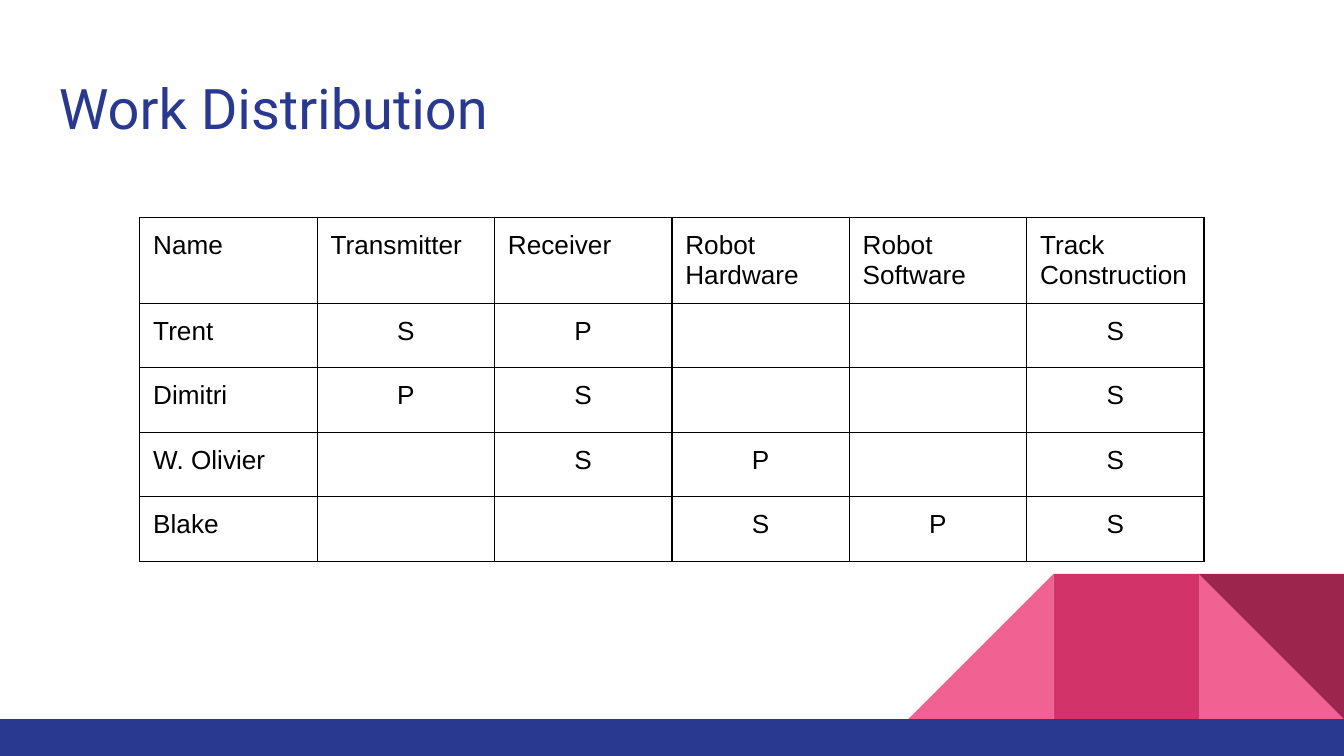
from typing import NamedTuple

from lxml.etree import SubElement
from pptx import Presentation
from pptx.dml.color import RGBColor
from pptx.enum.shapes import MSO_SHAPE
from pptx.enum.text import MSO_ANCHOR, PP_ALIGN
from pptx.oxml.ns import qn
from pptx.util import Inches, Pt


class Theme(NamedTuple):
    navy: str = "2A3990"
    light_pink: str = "F06292"
    pink: str = "D23369"
    dark_pink: str = "9C254D"
    ink: str = "000000"
    title_font: str = "Roboto"
    body_font: str = "Arial"
    title_size: int = 30
    body_size: int = 14
    header_line: float = 15.7
    border_width: float = 0.75


class Block(NamedTuple):
    preset: MSO_SHAPE
    left: float
    top: float
    width: float
    height: float
    color: str
    rotation: int = 0
    mirrored: bool = False


THEME = Theme()
SLIDE_WIDTH = 10
SLIDE_HEIGHT = SLIDE_WIDTH * 9 / 16
BAR_TOP = 5.35
TILE = 1.08
TILE_TOP = BAR_TOP - TILE
INSET = Inches(0.1)

TRIANGLE, RECTANGLE = MSO_SHAPE.RIGHT_TRIANGLE, MSO_SHAPE.RECTANGLE
DECORATION = [
    Block(TRIANGLE, SLIDE_WIDTH - TILE, TILE_TOP, TILE, TILE, THEME.light_pink),
    Block(TRIANGLE, SLIDE_WIDTH - 3 * TILE, TILE_TOP, TILE, TILE, THEME.light_pink, mirrored=True),
    Block(RECTANGLE, SLIDE_WIDTH - 2 * TILE, TILE_TOP, TILE, TILE, THEME.pink),
    Block(TRIANGLE, SLIDE_WIDTH - TILE, TILE_TOP, TILE, TILE, THEME.dark_pink, rotation=180),
    Block(RECTANGLE, 0, BAR_TOP, SLIDE_WIDTH, SLIDE_HEIGHT - BAR_TOP, THEME.navy),
]

ASSIGNMENTS = [
    ["Name", "Transmitter", "Receiver", "Robot Hardware", "Robot Software", "Track Construction"],
    ["Trent", "S", "P", "", "", "S"],
    ["Dimitri", "P", "S", "", "", "S"],
    ["W. Olivier", "", "S", "P", "", "S"],
    ["Blake", "", "", "S", "P", "S"],
]
COLUMN_WIDTH, HEADER_HEIGHT, ROW_HEIGHT = 1.32, 0.63, 0.48


def set_font(paragraph, name: str, size: int, color: str) -> None:
    paragraph.font.name = name
    paragraph.font.size = Pt(size)
    paragraph.font.color.rgb = RGBColor.from_string(color)


def draw_block(slide, block: Block) -> None:
    shape = slide.shapes.add_shape(
        block.preset, Inches(block.left), Inches(block.top), Inches(block.width), Inches(block.height)
    )
    shape.shadow.inherit = False
    shape.fill.solid()
    shape.fill.fore_color.rgb = RGBColor.from_string(block.color)
    shape.line.fill.background()
    shape.rotation = block.rotation
    if block.mirrored:
        shape._element.spPr.xfrm.set("flipH", "1")


def draw_title(slide, title: str) -> None:
    frame = slide.shapes.add_textbox(Inches(0.34), Inches(0.45), Inches(9.32), Inches(0.66)).text_frame
    frame.word_wrap = True
    frame.vertical_anchor = MSO_ANCHOR.TOP
    frame.margin_left = frame.margin_right = frame.margin_top = frame.margin_bottom = INSET
    heading = frame.paragraphs[0]
    heading.text = title
    set_font(heading, THEME.title_font, THEME.title_size, THEME.navy)


def outline_cell(cell) -> None:
    """Draw the four borders; they must precede the fill in the cell properties."""
    properties = cell._tc.get_or_add_tcPr()
    for position, side in enumerate(("lnL", "lnR", "lnT", "lnB")):
        border = SubElement(properties, qn(f"a:{side}"), w=str(Pt(THEME.border_width)))
        properties.insert(position, border)
        fill = SubElement(border, qn("a:solidFill"))
        SubElement(fill, qn("a:srgbClr"), val=THEME.ink)


def draw_assignments(slide, rows: list[list[str]]) -> None:
    column_count = len(rows[0])
    table = slide.shapes.add_table(
        len(rows), column_count, Inches(1.04), Inches(1.62),
        Inches(COLUMN_WIDTH * column_count),
        Inches(HEADER_HEIGHT + ROW_HEIGHT * (len(rows) - 1)),
    ).table
    table.first_row = table.horz_banding = False
    for column in table.columns:
        column.width = Inches(COLUMN_WIDTH)
    for row_index, row in enumerate(rows):
        table.rows[row_index].height = Inches(ROW_HEIGHT if row_index else HEADER_HEIGHT)
        for column_index, entry in enumerate(row):
            cell = table.cell(row_index, column_index)
            cell.margin_left = cell.margin_right = cell.margin_top = cell.margin_bottom = INSET
            cell.fill.background()
            outline_cell(cell)
            paragraph = cell.text_frame.paragraphs[0]
            paragraph.text = entry
            set_font(paragraph, THEME.body_font, THEME.body_size, THEME.ink)
            if row_index == 0:
                paragraph.line_spacing = Pt(THEME.header_line)
            elif column_index:
                paragraph.alignment = PP_ALIGN.CENTER


def main() -> None:
    presentation = Presentation()
    presentation.slide_width = Inches(SLIDE_WIDTH)
    presentation.slide_height = Inches(SLIDE_HEIGHT)
    slide = presentation.slides.add_slide(presentation.slide_layouts[6])
    for block in DECORATION:
        draw_block(slide, block)
    draw_title(slide, "Work Distribution")
    draw_assignments(slide, ASSIGNMENTS)
    presentation.save("out.pptx")


if __name__ == "__main__":
    main()
